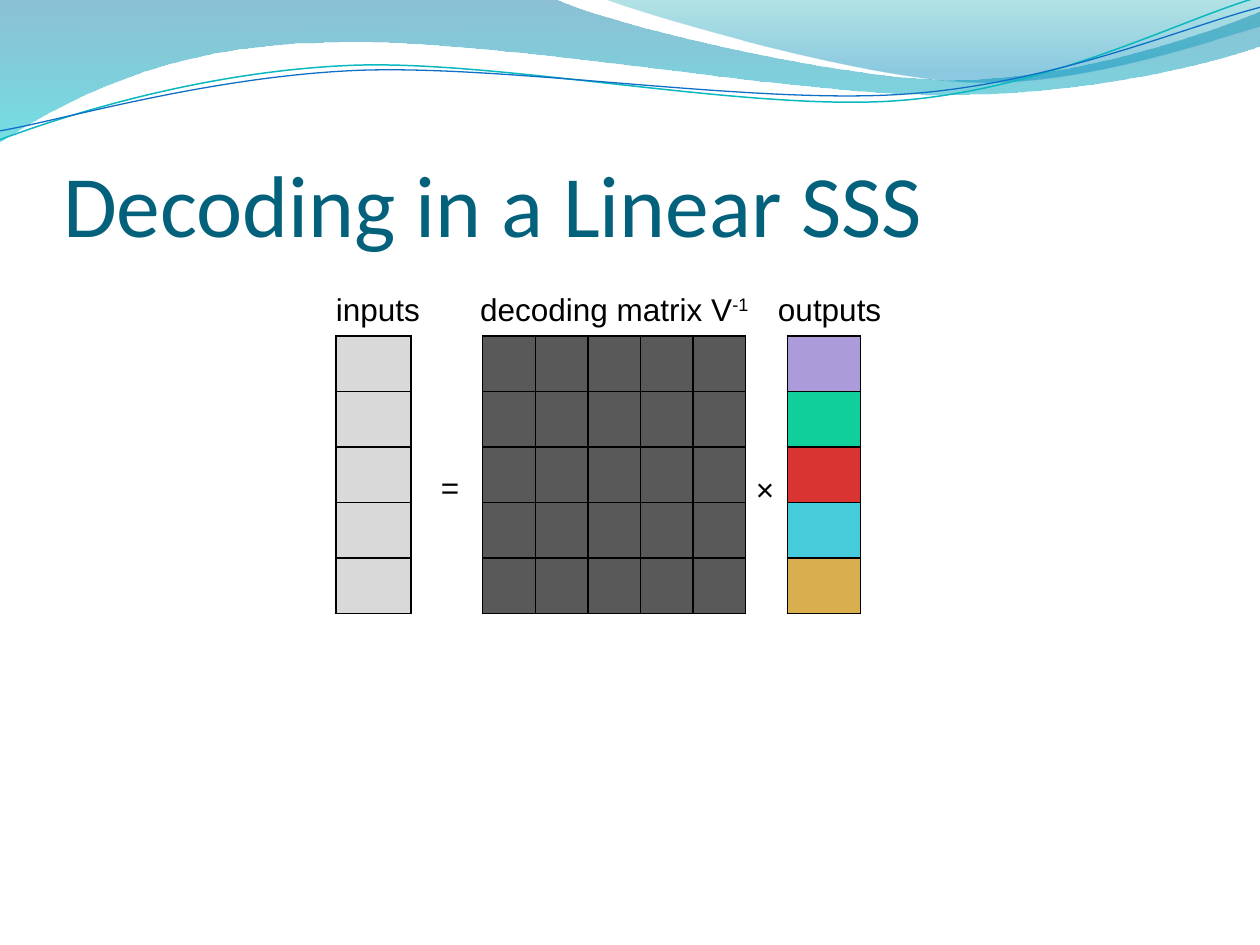
from lxml.etree import SubElement
from pptx import Presentation
from pptx.dml.color import RGBColor
from pptx.enum.text import MSO_ANCHOR as Anchor, MSO_AUTO_SIZE as AutoSize, PP_ALIGN as Align
from pptx.oxml import parse_xml
from pptx.oxml.ns import nsdecls, qn
from pptx.util import Cm, Pt


def rgb(hex_colour):
    return RGBColor.from_string(hex_colour)


def add_outline(start, segments, close):
    """Draw an outline of lines (2 numbers) and cubic Bezier curves (6 numbers)."""
    builder = shapes.build_freeform(Cm(start[0]), Cm(start[1]))
    for segment in segments:
        lengths = [Cm(number) for number in segment]
        builder.add_line_segments(list(zip(lengths[::2], lengths[1::2])), close=False)
    if close:
        builder.add_line_segments([], close=True)
    outline = builder.convert_to_shape()
    outline.shadow.inherit = False
    lines = iter(list(outline._element.iter(qn("a:lnTo"))))
    for segment in segments:
        first = next(lines)
        if len(segment) == 6:
            curve = parse_xml(f'<a:cubicBezTo {nsdecls("a")}/>')
            first.addprevious(curve)
            for line in (first, next(lines), next(lines)):
                curve.append(line[0])
                line.getparent().remove(line)
    return outline


prs = Presentation()
prs.slide_width, prs.slide_height = Cm(25.4), Cm(19.05)
slide = prs.slides.add_slide(prs.slide_layouts[5])
shapes = slide.shapes

# Header bands: start, segments, gradient stops (position, colour, opacity in %)
bands = [
    ((-0.03, -0.03),
     [(11.18, -0.03), (12.09, 0.43, 16.87, 1.6, 19.25, 1.6),
      (21.67, 1.6, 24.33, 0.66, 25.4, 0.23), (25.43, 0.91),
      (24.97, 1.12, 22.1, 1.93, 18.95, 1.91), (15.8, 1.91, 9.7, 0.71, 6.53, 0.86),
      (3.28, 0.89, 1.17, 2.11, -0.03, 2.87), (-0.03, -0.03)],
     [(0, "0074A1", 45), (1, "00C6CF", 55)]),
    ((12.17, -0.03),
     [(12.93, 0.28, 17.32, 1.57, 19.53, 1.65),
      (21.74, 1.75, 24.41, 0.81, 25.4, 0.53), (25.4, 0), (12.17, -0.03)],
     [(0, "00A1A9", 30), (0.8, "008BBF", 45)]),
]
for start, segments, stops in bands:
    band = add_outline(start, segments, close=True)
    band.line.fill.background()
    band.fill.gradient()
    band.fill.gradient_angle = 270
    for stop, (position, colour, _) in zip(band.fill.gradient_stops, stops):
        stop.position = position
        stop.color.rgb = rgb(colour)
    gradient = band._element.spPr.find(qn("a:gradFill"))
    for colour_element, (_, _, opacity) in zip(gradient.iter(qn("a:srgbClr")), stops):
        SubElement(colour_element, qn("a:alpha"), val=str(opacity * 1000))

# Header lines: start, segments, colour, width
waves = [
    ((-0.01, 2.82),
     [(1.22, 2.36, 4.01, 1.45, 7.04, 1.32), (10.03, 1.19, 15.06, 2.26, 18.11, 2.03),
      (21.16, 1.8, 23.83, 0.38, 25.35, -0.05)], "0AB8BF", 0.85),
    ((-0.01, 2.64),
     [(1.19, 2.44, 4.17, 1.55, 7.19, 1.42), (10.24, 1.3, 15.16, 2.11, 18.21, 1.9),
      (21.23, 1.7, 23.9, 0.53, 25.4, 0.15)], "0F6FC6", 0.75),
]
for start, segments, colour, width in waves:
    wave = add_outline(start, segments, close=False)
    wave.fill.background()
    wave.line.color.rgb = rgb(colour)
    wave.line.width = Pt(width)

title = shapes.title
shapes._spTree.append(title._element)  # in front of the header
title.left, title.top, title.width, title.height = Cm(1.27), Cm(1.96), Cm(22.86), Cm(3.18)
frame = title.text_frame
frame.text = "Decoding in a Linear SSS"
frame.auto_size = AutoSize.NONE
frame.vertical_anchor = Anchor.BOTTOM
frame.margin_left = frame.margin_right = frame.margin_bottom = 0
heading = frame.paragraphs[0]
heading.alignment = Align.LEFT
heading.font.name, heading.font.size = "Calibri", Pt(50)
heading.font.color.rgb = rgb("04617B")

# Outputs, inputs and decoding matrix: left, column width, cell colours by row
row_height = 1.12
matrices = [
    (15.87, 1.48, [["AC9BD9"], ["10CF9B"], ["D93332"], ["45CBD9"], ["D9AE4E"]]),
    (6.77, 1.52, [["D9D9D9"]] * 5),
    (9.73, 1.06, [["595959"] * 5] * 5),
]
for left, column_width, colours in matrices:
    rows, columns = len(colours), len(colours[0])
    matrix = shapes.add_table(rows, columns, Cm(left), Cm(6.77),
                              Cm(column_width * columns), Cm(row_height * rows)).table
    matrix.first_row = matrix.horz_banding = False
    for column in matrix.columns:
        column.width = Cm(column_width)
    for row, row_colours in zip(matrix.rows, colours):
        row.height = Cm(row_height)
        for cell, colour in zip(row.cells, row_colours):
            cell.fill.solid()
            cell.fill.fore_color.rgb = rgb(colour)
            for index, side in enumerate(("lnL", "lnR", "lnT", "lnB")):
                cell._tc.tcPr.insert(index, parse_xml(
                    f'<a:{side} {nsdecls("a")} w="{Pt(1)}"><a:solidFill>'
                    f'<a:srgbClr val="000000"/></a:solidFill></a:{side}>'))

# Operators and labels: text, superscript, left, top, width, wrapped and centred
labels = [
    ("=", "", 8.64, 9.32, 0.89, False),
    ("inputs", "", 5.93, 5.72, 3.38, True),
    ("outputs", "", 15.24, 5.72, 2.97, True),
    ("decoding matrix V", "-1", 9.31, 5.72, 6.15, True),
    ("×", "", 14.99, 9.35, 0.89, False),
]
for text, superscript, left, top, width, wrapped in labels:
    frame = shapes.add_textbox(Cm(left), Cm(top), Cm(width), Cm(1.02)).text_frame
    frame.word_wrap = wrapped
    frame.auto_size = AutoSize.SHAPE_TO_FIT_TEXT
    label = frame.paragraphs[0]
    label.alignment = Align.CENTER if wrapped else Align.LEFT
    label.font.name, label.font.size = "Arial", Pt(18)
    label.font.color.rgb = rgb("000000")
    label.add_run().text = text
    if superscript:
        exponent = label.add_run()
        exponent.text = superscript
        exponent.font._element.set("baseline", "30000")

prs.save("out.pptx")
